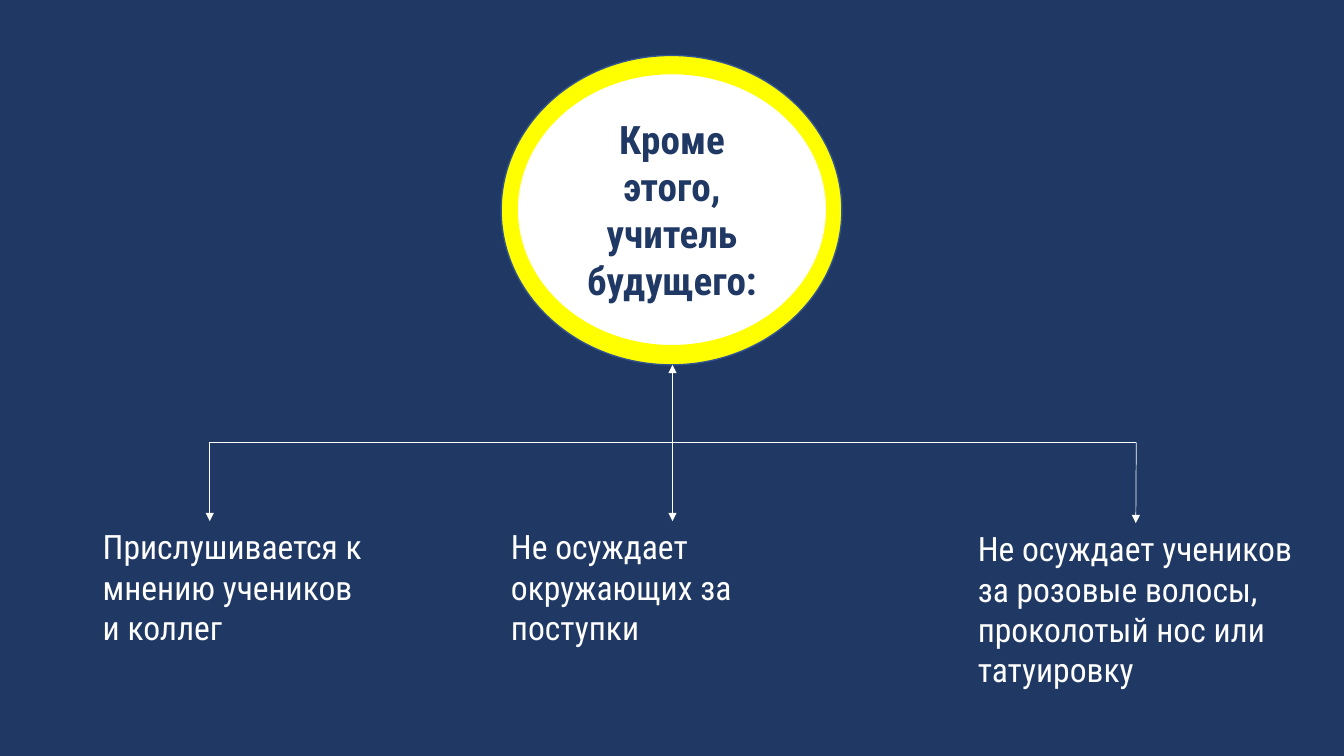
"""Build a slide on the teacher of the future with three branches."""
from lxml import etree
from pptx import Presentation
from pptx.dml.color import RGBColor
from pptx.enum.shapes import MSO_CONNECTOR, MSO_SHAPE
from pptx.enum.text import MSO_ANCHOR, MSO_AUTO_SIZE, PP_ALIGN
from pptx.oxml.ns import qn
from pptx.util import Inches, Pt

STRAIGHT = MSO_CONNECTOR.STRAIGHT
OVAL = MSO_SHAPE.OVAL
MIDDLE = MSO_ANCHOR.MIDDLE
GROW = MSO_AUTO_SIZE.SHAPE_TO_FIT_TEXT
CENTER = PP_ALIGN.CENTER
LEFT = PP_ALIGN.LEFT

NAVY = RGBColor(0x20, 0x38, 0x64)
BLUE = RGBColor(0x32, 0x54, 0x91)
YELLOW = RGBColor(0xFF, 0xFF, 0x00)
WHITE = RGBColor(0xFF, 0xFF, 0xFF)


class Diagram:
    """Hold the style and the slide being drawn."""

    font = "Roboto Condensed"

    def __init__(self, slide):
        self.slide = slide
        background = slide.background.fill
        background.solid()
        background.fore_color.rgb = NAVY

    def set_text(self, frame, wording, size, color, bold=False, align=LEFT):
        frame.word_wrap = True
        paragraph = frame.paragraphs[0]
        paragraph.text = wording
        paragraph.alignment = align
        paragraph.font.name = self.font
        paragraph.font.size = Pt(size)
        paragraph.font.bold = bold
        paragraph.font.color.rgb = color

    def ellipse(self, left, top, width, height, fill, outline):
        oval = self.slide.shapes.add_shape(
            OVAL, Inches(left), Inches(top), Inches(width), Inches(height))
        oval.shadow.inherit = False
        oval.fill.solid()
        oval.fill.fore_color.rgb = fill
        oval.line.color.rgb = outline
        oval.line.width = Pt(1)
        return oval

    def caption(self, left, top, width, height, wording):
        box = self.slide.shapes.add_textbox(
            Inches(left), Inches(top), Inches(width), Inches(height))
        self.set_text(box.text_frame, wording, 24, WHITE)
        box.text_frame.auto_size = GROW
        return box

    def line(self, x1, y1, x2, y2, arrows=()):
        connector = self.slide.shapes.add_connector(
            STRAIGHT, Inches(x1), Inches(y1), Inches(x2), Inches(y2))
        connector.line.color.rgb = WHITE
        connector.line.width = Pt(0.5)
        properties = connector._element.spPr
        outline = properties.find(qn("a:ln"))
        for end in arrows:
            etree.SubElement(outline, qn(f"a:{end}"), type="triangle")
        etree.SubElement(properties, qn("a:effectLst"))
        return connector


def main():
    deck = Presentation()
    deck.slide_width, deck.slide_height = Inches(13.33), Inches(7.5)
    diagram = Diagram(deck.slides.add_slide(deck.slide_layouts[6]))

    diagram.ellipse(4.97, 0.55, 3.38, 3.07, YELLOW, BLUE)
    topic = diagram.ellipse(5.13, 0.73, 3.07, 2.7, WHITE, YELLOW)
    topic.text_frame.vertical_anchor = MIDDLE
    diagram.set_text(topic.text_frame, "Кроме этого, учитель будущего:",
                     28, NAVY, bold=True, align=CENTER)

    branch_y, arrow_y = 4.39, 5.17
    left_x, middle_x, right_x = 2.08, 6.67, 11.27
    diagram.line(2.07, branch_y, right_x, branch_y)
    diagram.line(middle_x, 3.62, middle_x, arrow_y, ("headEnd", "tailEnd"))
    diagram.line(left_x, branch_y, left_x, arrow_y, ("tailEnd",))
    right_arrow = diagram.line(right_x, branch_y, right_x, arrow_y, ("tailEnd",))

    diagram.caption(0.92, arrow_y, 2.88, 1.31,
                    "Прислушивается к мнению учеников и коллег")
    diagram.caption(4.97, arrow_y, 3.57, 1.31,
                    "Не осуждает окружающих за поступки")
    appearance = diagram.caption(
        9.6, 5.19, 3.33, 1.72,
        "Не осуждает учеников за розовые волосы, проколотый нос или татуировку")
    right_arrow.end_connect(appearance, 0)

    deck.save("out.pptx")


if __name__ == "__main__":
    main()
